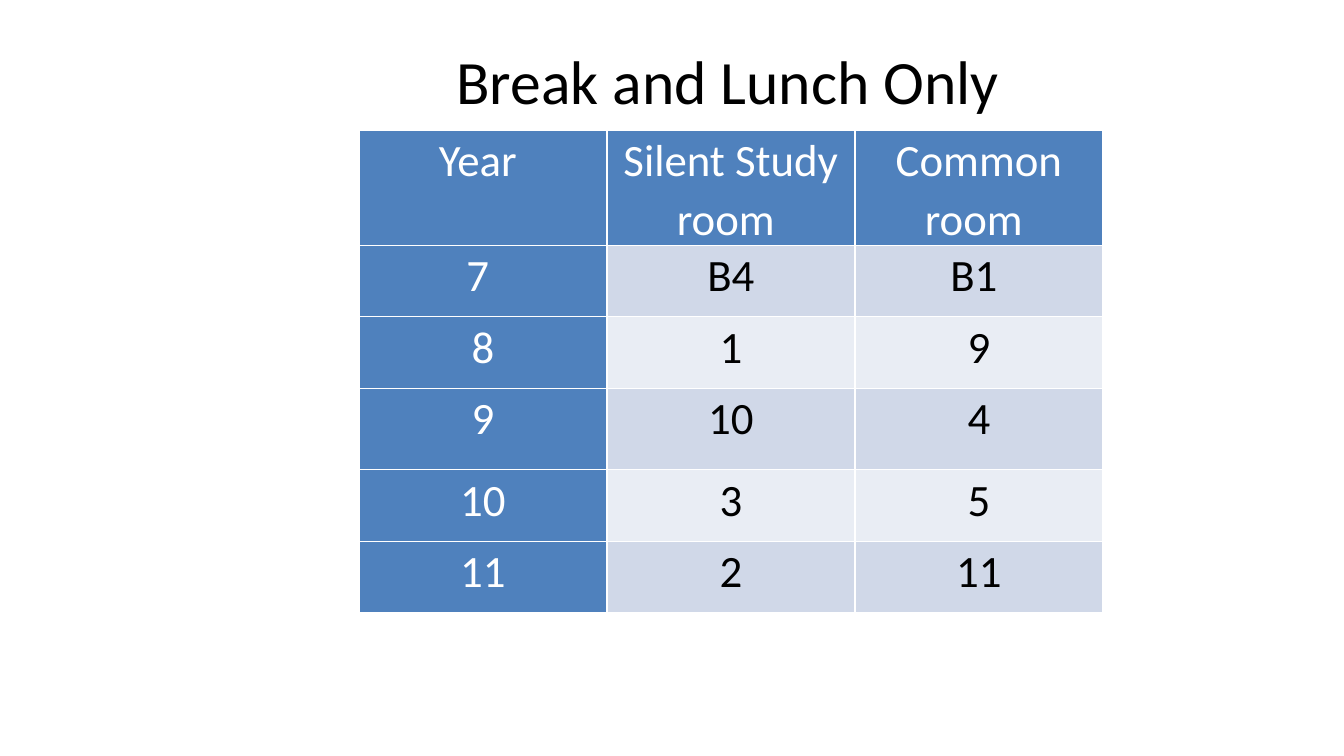
from lxml import etree
from pptx import Presentation
from pptx.dml.color import RGBColor
from pptx.enum.text import MSO_ANCHOR, PP_ALIGN
from pptx.oxml.ns import qn
from pptx.util import Inches, Pt

TITLE = "Break and Lunch Only"
ROWS = [
    ("Year ", "Silent Study room ", "Common room "),
    ("7 ", "B4", "B1 "),
    ("8", "1", "9"),
    ("9", "10", "4"),
    ("10", "3", "5"),
    ("11", "2", "11"),
]
ROW_HEIGHTS = [1.03, 0.71, 0.71, 0.81, 0.71, 0.71]
COL_WIDTH = 2.46
FONT = "Calibri"
BLUE, BANDS = "4F81BD", ("E9EDF4", "D0D8E8")
BLACK, WHITE = "000000", "FFFFFF"


def rgb(value):
    return RGBColor.from_string(value)


def style(p, size, color):
    p.alignment = PP_ALIGN.CENTER
    p.font.name = FONT
    p.font.size = Pt(size)
    p.font.color.rgb = rgb(color)


def add_borders(cell, color, width):
    tcPr = cell._tc.get_or_add_tcPr()
    for side in ("lnL", "lnR", "lnT", "lnB"):
        ln = etree.SubElement(tcPr, qn(f"a:{side}"), w=str(Pt(width)))
        fill = etree.SubElement(ln, qn("a:solidFill"))
        etree.SubElement(fill, qn("a:srgbClr"), val=color)


def add_title(s):
    box = s.shapes.add_textbox(Inches(1.22), Inches(0.17), Inches(12), Inches(1.25))
    tf = box.text_frame
    tf.word_wrap = True
    tf.vertical_anchor = MSO_ANCHOR.MIDDLE
    p = tf.paragraphs[0]
    p.text = TITLE
    style(p, 44, BLACK)


def fill_cell(cell, text, r, c):
    is_header = r == 0 or c == 0
    cell.margin_left = cell.margin_right = Inches(0.07)
    cell.margin_top = cell.margin_bottom = 0
    add_borders(cell, WHITE, 1)
    cell.fill.solid()
    cell.fill.fore_color.rgb = rgb(BLUE if is_header else BANDS[r % 2])
    p = cell.text_frame.paragraphs[0]
    p.text = text
    p.line_spacing = 1.07
    p.space_after = Pt(8)
    style(p, 32, WHITE if is_header else BLACK)
    p.font.bold = False


def add_room_table(s):
    cols = len(ROWS[0])
    table = s.shapes.add_table(
        len(ROWS), cols, Inches(3.56), Inches(1.29),
        Inches(COL_WIDTH * cols), Inches(sum(ROW_HEIGHTS))).table
    for col in table.columns:
        col.width = Inches(COL_WIDTH)
    for r, (height, texts) in enumerate(zip(ROW_HEIGHTS, ROWS)):
        table.rows[r].height = Inches(height)
        for c, text in enumerate(texts):
            fill_cell(table.cell(r, c), text, r, c)


def main():
    prs = Presentation()
    prs.slide_width, prs.slide_height = Inches(13.33), Inches(7.5)
    s = prs.slides.add_slide(prs.slide_layouts[6])
    add_title(s)
    add_room_table(s)
    prs.save("out.pptx")


if __name__ == "__main__":
    main()
